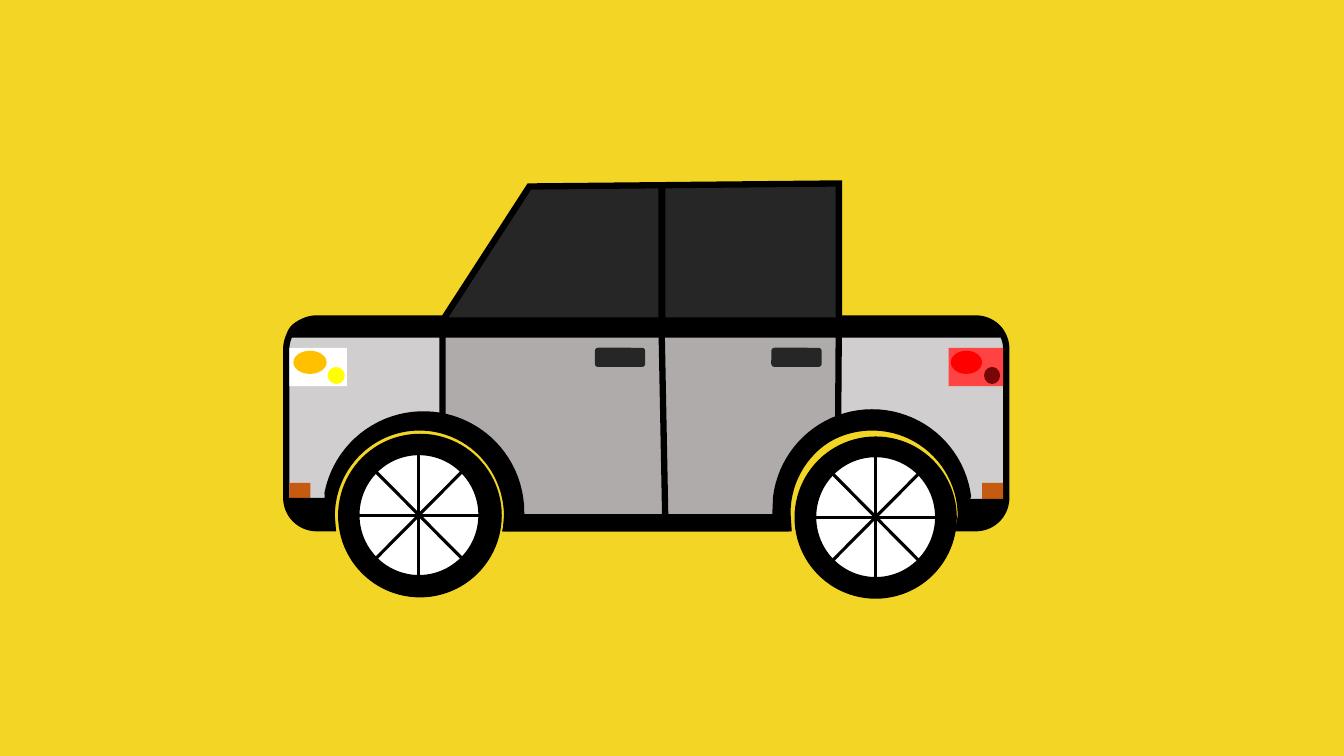
import math

from lxml import etree
from pptx import Presentation
from pptx import util as u
from pptx.dml.color import RGBColor
from pptx.enum import shapes
from pptx.oxml.ns import qn

PX = 9144
COLORS = {
    "yellow": "F3D625", "black": "000000", "white": "FFFFFF",
    "body": "D0CECE", "door": "AFABAB", "glass": "262626",
    "amber": "FFC000", "lamp": "FFFF00", "marker": "C55A11",
    "tail": "FF4343", "red": "FF0000", "maroon": "780606",
}
RECT = shapes.MSO_SHAPE.RECTANGLE
OVAL = shapes.MSO_SHAPE.OVAL
ROUNDED = shapes.MSO_SHAPE.ROUNDED_RECTANGLE
TYRES = [(336, 431, 1), (788, 433, 0)]
RIMS = [(355, 450), (808, 452)]


def px(value):
    return u.Emu(round(value * PX))


def color(name):
    return RGBColor.from_string(COLORS[name])


def arc(center_x, center_y, radius_x, radius_y, start, end):
    steps = max(2, round(abs(end - start) / 4))
    angles = [math.radians(start + (end - start) * i / steps) for i in range(steps + 1)]
    return [(center_x + radius_x * math.cos(a), center_y + radius_y * math.sin(a))
            for a in angles]


def paint(shape, fill, line=0):
    shape.shadow.inherit = False
    shape.fill.solid()
    shape.fill.fore_color.rgb = color(fill)
    if line:
        shape.line.color.rgb = color("black")
        shape.line.width = u.Pt(line)
        miter = etree.SubElement(shape.line._get_or_add_ln(), qn("a:miter"))
        miter.set("lim", "800000")
    else:
        shape.line.fill.background()


def add_part(car, kind, left, top, width, height, fill, line=0):
    part = car.shapes.add_shape(kind, px(left), px(top), px(width), px(height))
    paint(part, fill, line)


def add_outline(car, points, fill, line=0):
    corners = [(px(x), px(y)) for x, y in points]
    builder = car.shapes.build_freeform(*corners[0], scale=1.0)
    builder.add_line_segments(corners[1:], close=True)
    paint(builder.convert_to_shape(), fill, line)


def add_line(car, x1, y1, x2, y2, width):
    line = car.shapes.add_connector(
        shapes.MSO_CONNECTOR.STRAIGHT, px(x1), px(y1), px(x2), px(y2))
    line.line.color.rgb = color("black")
    line.line.width = u.Pt(width)
    etree.SubElement(line._element.spPr, qn("a:effectLst"))


def add_body(car):
    add_outline(car, [
        *arc(314, 346, 30, 30, 180, 270), *arc(968, 346, 30, 30, 270, 360),
        *arc(968, 494, 30, 30, 0, 90), (951, 524),
        *arc(865, 512, 88, 88, 0, -180), (779, 524), (502, 524),
        *arc(416, 512, 87, 88, 0, -180), (330, 524),
        *arc(314, 494, 30, 30, 90, 180),
    ], "body", 4.5)


def add_doors(car):
    add_outline(car, [
        (439, 317), (656, 317), (656, 323), (663, 323), (663, 320), (832, 320),
        *arc(868, 509, 87, 87, 245, 180), (782, 524), (502, 524),
        *arc(418, 511, 87, 87, 0, -76), (435, 425), (439, 424),
    ], "door", 4.5)
    add_line(car, 656, 316, 660, 525, 4.5)


def add_rim(car, left, top):
    width, height = 121, 122
    add_part(car, OVAL, left, top, width, height, "white", 2.25)
    center_x, center_y = left + width / 2, top + height / 2
    for angle in range(0, 180, 45):
        dx = width / 2 * math.cos(math.radians(angle))
        dy = height / 2 * math.sin(math.radians(angle))
        add_line(car, center_x - dx, center_y - dy, center_x + dx, center_y + dy, 2.25)


def add_windows(car):
    add_outline(car, [(437, 321), (525, 185), (832, 182), (832, 323)], "glass", 4.5)
    add_part(car, RECT, 653, 185, 7, 136, "black")


def add_lights(car):
    for kind, left, top, width, height, fill in [
        (RECT, 287, 345, 57, 38, "white"),
        (OVAL, 291, 348, 33, 23, "amber"),
        (OVAL, 325, 364, 17, 17, "lamp"),
        (RECT, 941, 345, 54, 38, "tail"),
        (OVAL, 943, 348, 31, 23, "red"),
        (OVAL, 976, 364, 16, 17, "maroon"),
        (RECT, 287, 479, 21, 17, "marker"),
        (RECT, 974, 479, 21, 17, "marker"),
    ]:
        add_part(car, kind, left, top, width, height, fill)


def add_trim(car):
    add_outline(car, [
        *arc(865, 505, 99, 99, 187, 353), (962, 495),
        *arc(970, 495, 28, 28, 0, 90), (951, 522), (952, 505), (953, 501),
        *arc(866, 507, 85, 84, -12, -168), (783, 503), (782, 518),
        (782, 527), (502, 527), (503, 510),
        *arc(416, 511, 86, 86, -11, -180), (330, 523),
        *arc(312, 494, 28, 29, 90, 180), (322, 494),
        *arc(420, 508, 100, 100, 191, 360), (520, 510), (766, 510),
    ], "black")
    add_outline(car, [
        *arc(310, 335, 26, 20, 180, 270), *arc(971, 335, 26, 20, 270, 360),
    ], "black")


def main():
    deck = Presentation()
    deck.slide_width, deck.slide_height = u.Inches(13.33), u.Inches(7.5)
    page = deck.slides.add_slide(deck.slide_layouts[6])
    page.background.fill.solid()
    page.background.fill.fore_color.rgb = color("yellow")

    car = page.shapes.add_group_shape()
    add_body(car)
    for left, top, line in TYRES:
        add_part(car, OVAL, left, top, 161, 161, "black", line)
    add_doors(car)
    for left, top in RIMS:
        add_rim(car, left, top)
    add_windows(car)
    for left in (590, 765):
        add_part(car, ROUNDED, left, 345, 50, 19, "glass")
    add_lights(car)
    add_trim(car)
    deck.save("out.pptx")


if __name__ == "__main__":
    main()
